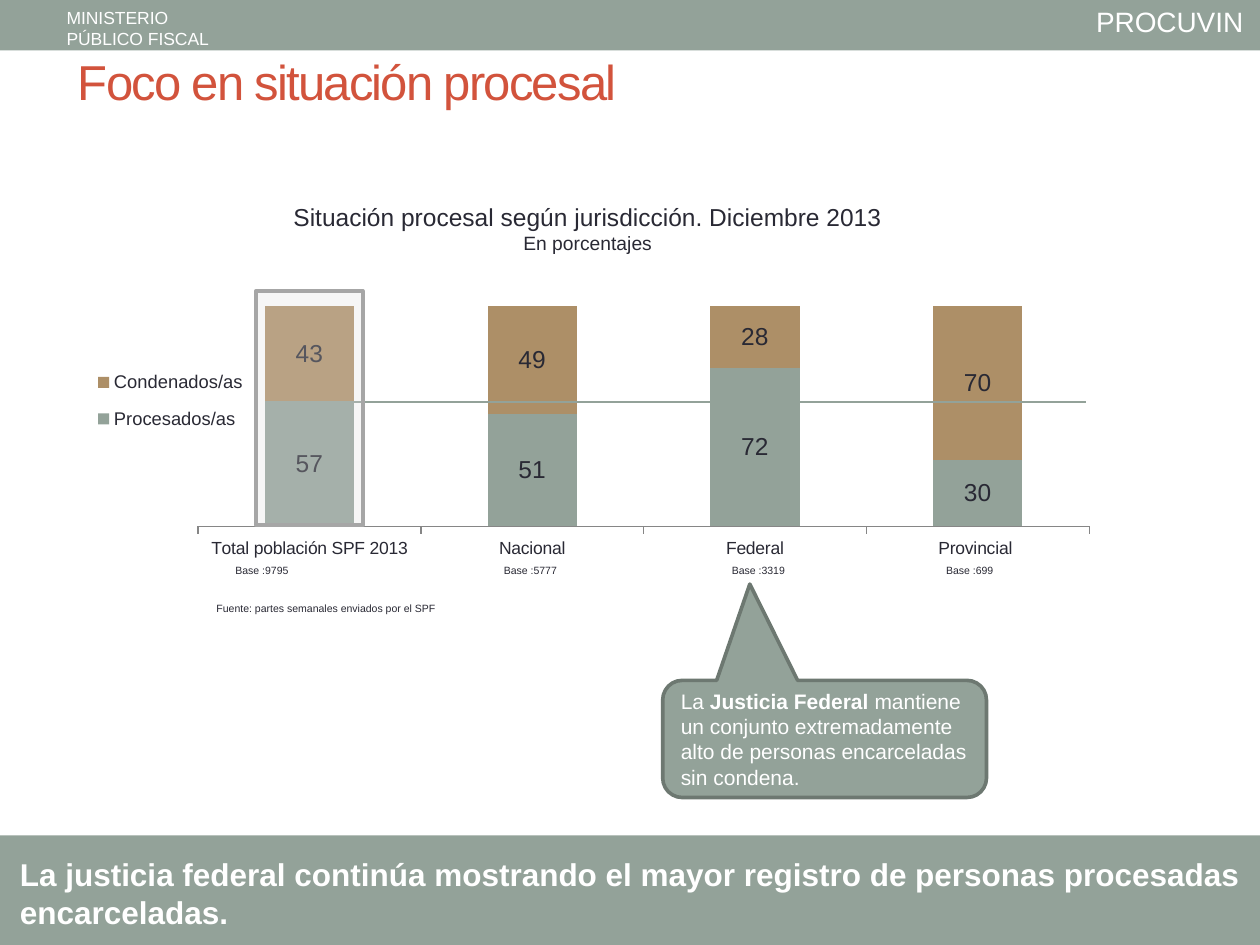
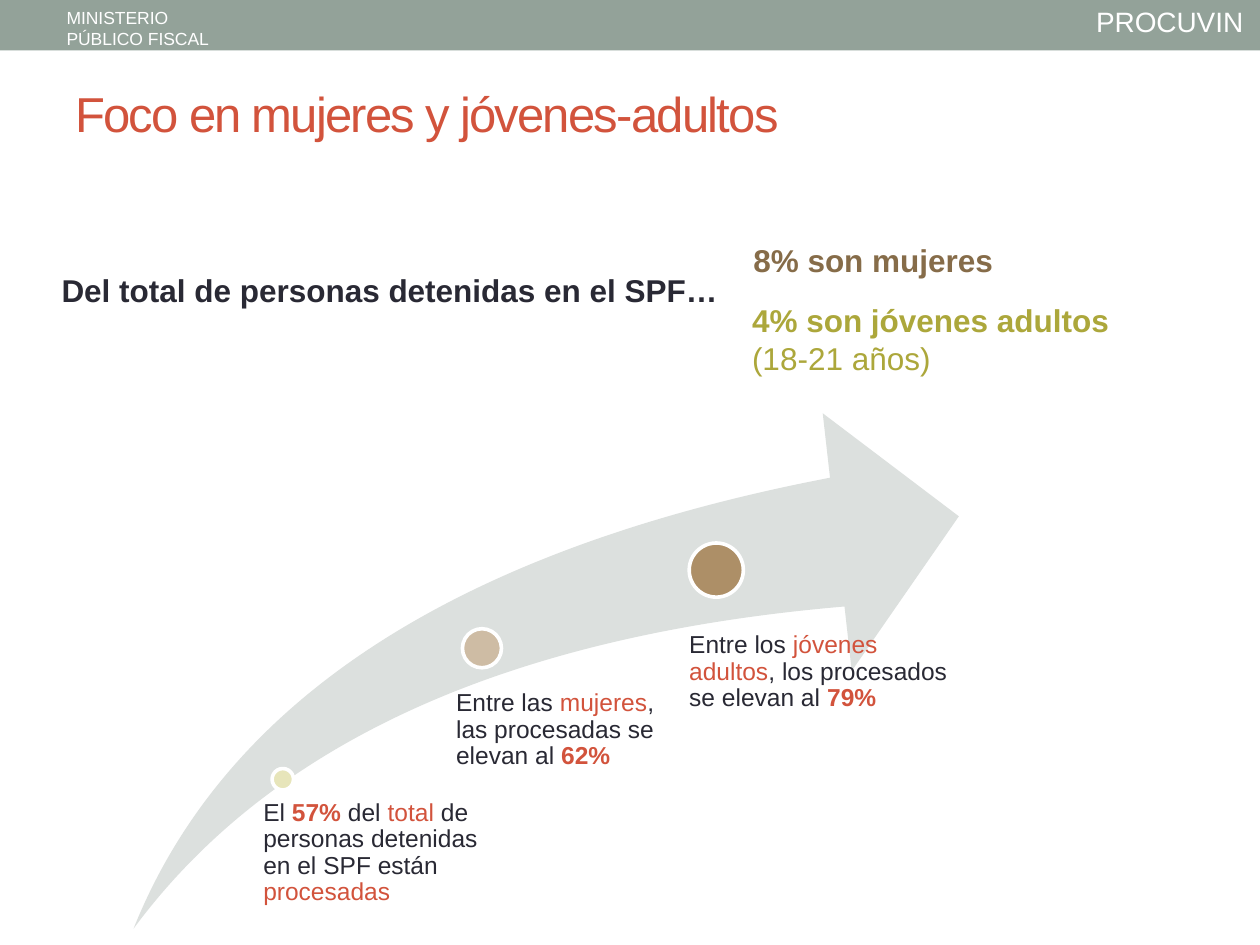
from lxml import etree
from pptx import Presentation
from pptx.chart.data import CategoryChartData
from pptx.dml.color import RGBColor
from pptx.enum.chart import XL_CHART_TYPE, XL_LEGEND_POSITION, XL_TICK_LABEL_POSITION, XL_TICK_MARK
from pptx.enum.shapes import MSO_CONNECTOR, MSO_SHAPE
from pptx.enum.text import MSO_ANCHOR, MSO_AUTO_SIZE, PP_ALIGN
from pptx.oxml import parse_xml
from pptx.oxml.ns import nsdecls, qn
from pptx.util import Inches, Pt

STACKED = XL_CHART_TYPE.COLUMN_STACKED_100
RIGHT = XL_LEGEND_POSITION.RIGHT
LOW = XL_TICK_LABEL_POSITION.LOW
TICK_OUT, TICK_NONE = XL_TICK_MARK.OUTSIDE, XL_TICK_MARK.NONE
STRAIGHT = MSO_CONNECTOR.STRAIGHT
RECT, OVAL = MSO_SHAPE.RECTANGLE, MSO_SHAPE.OVAL
CALLOUT, SWOOSH = MSO_SHAPE.ROUNDED_RECTANGULAR_CALLOUT, MSO_SHAPE.SWOOSH_ARROW
TOP, MIDDLE = MSO_ANCHOR.TOP, MSO_ANCHOR.MIDDLE
LEFT, CENTER = PP_ALIGN.LEFT, PP_ALIGN.CENTER
FIT = MSO_AUTO_SIZE.SHAPE_TO_FIT_TEXT

FONT = "Arial"
WHITE = RGBColor(0xFF, 0xFF, 0xFF)
INK = RGBColor(0x29, 0x29, 0x34)
RED = RGBColor(0xD2, 0x53, 0x3C)
SAGE = RGBColor(0x93, 0xA2, 0x99)
DARK_SAGE = RGBColor(0x6D, 0x78, 0x71)
TAN = RGBColor(0xAD, 0x8F, 0x67)
LIGHT_TAN = RGBColor(0xCE, 0xBC, 0xA4)
BROWN = RGBColor(0x86, 0x6C, 0x49)
OLIVE = RGBColor(0xAC, 0xA7, 0x3B)
CREAM = RGBColor(0xE7, 0xE5, 0xBA)
PALE = RGBColor(0xDC, 0xE0, 0xDE)
VEIL = RGBColor(0xDD, 0xDD, 0xDD)
GREY = RGBColor(0xA6, 0xA6, 0xA6)
AXIS = RGBColor(0x86, 0x86, 0x86)
OUTLINE = 2.08

# A paragraph is a list of runs; a run is (text, format values).
BOLD = {"bold": True}
HOT = {"color": RED}
HOT_BOLD = {"color": RED, "bold": True}

HEADER = [
    ((8.6, -0.01, 1.38, 0.37), 16, [[("PROCUVIN", {})]]),
    ((0.43, 0.01, 1.34, 0.44), 10, [[("MINISTERIO", {})], [("PÚBLICO FISCAL", {})]]),
]

CATEGORIES = ["Total población SPF 2013", "Nacional", "Federal", "Provincial "]
SERIES = [
    ("Procesados/as", [57, 51, 72, 30], SAGE),
    ("Condenados/as", [43, 49, 28, 70], TAN),
]
BASES = [(1.77, 9795), (3.9, 5777), (5.71, 3319), (7.41, 699)]
CHART_TITLE = [
    [("Situación procesal según jurisdicción. Diciembre 2013", {})],
    [("En porcentajes", {"size": Pt(11)})],
]
CALLOUT_TEXT = [[
    ("La ", {}), ("Justicia Federal ", BOLD),
    ("mantiene un conjunto extremadamente alto de personas encarceladas sin condena.", {}),
]]
SOURCE = "Fuente: partes semanales enviados por el SPF"
CONCLUSION = ("La justicia federal continúa mostrando el mayor registro "
              "de personas procesadas encarceladas.")

SHARES = [
    ((5.88, 1.86, 4.02, 0.61), BROWN, [[("8% son mujeres", BOLD)]]),
    ((5.87, 2.34, 3.31, 0.71), OLIVE,
     [[("4% son jóvenes adultos ", BOLD), ("(18-21 años)", {})]]),
    ((0.39, 2.1, 7.17, 0.4), INK, [[("Del total de personas detenidas en el SPF…", BOLD)]]),
]
# dot (left, top, diameter, colour), text box, left inset, runs
MILESTONES = [
    ((2.16, 6.1, 0.17, CREAM), (2, 6.35, 1.86, 1.02), 0.09,
     [("El ", {}), ("57% ", HOT_BOLD), ("del ", {}), ("total", HOT),
      (" de personas detenidas en el SPF están ", {}), ("procesadas", HOT)]),
    ((3.67, 4.99, 0.31, LIGHT_TAN), (3.46, 5.48, 1.89, 0.65), 0.16,
     [("Entre las ", {}), ("mujeres", HOT),
      (", las procesadas se elevan al ", {}), ("62%", HOT_BOLD)]),
    ((5.47, 4.31, 0.43, TAN), (5.24, 5.02, 2.4, 2.04), 0.23,
     [("Entre los ", {}), ("jóvenes adultos", HOT),
      (", los procesados se elevan al ", {}), ("79%", HOT_BOLD)]),
]


def set_font(font, **values):
    values = {"name": FONT, **values}
    font.color.rgb = values.pop("color", INK)
    for name, value in values.items():
        setattr(font, name, value)


def fill_text(tf, paragraphs, size, color=INK, align=LEFT, spacing=None):
    for i, runs in enumerate(paragraphs):
        p = tf.paragraphs[0] if i == 0 else tf.add_paragraph()
        p.alignment = align
        p.line_spacing = spacing
        for text, values in runs:
            r = p.add_run()
            r.text = text
            set_font(r.font, **{"size": Pt(size), "color": color, **values})


def add_text(slide, box, paragraphs, size, color=INK, wrap=True, fit=True,
             anchor=TOP, insets=None, **layout):
    tf = slide.shapes.add_textbox(*map(Inches, box)).text_frame
    tf.word_wrap = wrap
    tf.vertical_anchor = anchor
    if fit:
        tf.auto_size = FIT
    if insets:
        for side, value in zip(("left", "top", "right", "bottom"), insets):
            setattr(tf, f"margin_{side}", Inches(value))
    fill_text(tf, paragraphs, size, color, **layout)
    return tf


def add_shape(slide, kind, box, fill, line=None, adjustments=()):
    sp = slide.shapes.add_shape(kind, *map(Inches, box))
    sp.shadow.inherit = False
    sp.fill.solid()
    sp.fill.fore_color.rgb = fill
    if line is None:
        sp.line.fill.background()
    else:
        sp.line.color.rgb = line
        sp.line.width = Pt(OUTLINE)
    for i, value in enumerate(adjustments):
        sp.adjustments[i] = value
    return sp


def set_alpha(sp, percent):
    color = sp.fill._xPr.find(qn("a:solidFill"))[0]
    etree.SubElement(color, qn("a:alpha"), val=str(percent * 1000))


def start_slide(prs, title, title_box):
    """Add a blank slide with the shared header band and title."""
    slide = prs.slides.add_slide(prs.slide_layouts[6])
    add_shape(slide, RECT, (0, 0, 10, 0.4), SAGE)
    for box, size, paragraphs in HEADER:
        add_text(slide, box, paragraphs, size, WHITE, wrap=False)
    tf = add_text(slide, title_box, [[(title, {})]], 28, RED, fit=False, anchor=MIDDLE)
    tf.paragraphs[0].runs[0].font._element.set("spc", "-100")
    return slide


def manual_layout(x, y, w, h, inner=False):
    target = '<c:layoutTarget val="inner"/>' if inner else ""
    modes = '<c:xMode val="edge"/><c:yMode val="edge"/>'
    sizes = "".join(f'<c:{k} val="{v}"/>' for k, v in zip("xywh", (x, y, w, h)))
    return parse_xml(f'<c:layout {nsdecls("c")}><c:manualLayout>{target}{modes}{sizes}'
                     '</c:manualLayout></c:layout>')


def add_status_chart(slide):
    data = CategoryChartData()
    data.categories = CATEGORIES
    for name, values, _ in SERIES:
        data.add_series(name, values)
    box = map(Inches, (0.51, 2.36, 8.43, 2.13))
    chart = slide.shapes.add_chart(STACKED, *box, data).chart
    set_font(chart.font, size=Pt(18))
    chart.has_title = False

    plot = chart.plots[0]
    plot.gap_width, plot.overlap = 150, 100
    plot.vary_by_categories = False
    for series, (_, _, color) in zip(plot.series, SERIES):
        series.format.fill.solid()
        series.format.fill.fore_color.rgb = color
        series.data_labels.show_value = True
        set_font(series.data_labels.font, size=Pt(14))

    chart.value_axis.visible = False
    chart.value_axis.has_major_gridlines = False
    axis = chart.category_axis
    axis.major_tick_mark, axis.minor_tick_mark = TICK_OUT, TICK_NONE
    axis.tick_label_position = LOW
    axis.format.line.color.rgb = AXIS
    set_font(axis.tick_labels.font, size=Pt(10))

    chart.has_legend = True
    legend = chart.legend
    legend.position = RIGHT
    legend.include_in_layout = False
    set_font(legend.font, size=Pt(10.5))
    area = chart._chartSpace.chart.plotArea
    for parent in (area, legend._element):
        for old in parent.findall(qn("c:layout")):
            parent.remove(old)
    area.insert(0, manual_layout(0.126, 0.034, 0.839, 0.82, inner=True))
    position = legend._element.find(qn("c:legendPos"))
    position.addnext(manual_layout(0.02, 0.22, 0.16, 0.33))


def build_status_slide(prs):
    slide = start_slide(prs, "Foco en situación procesal", (0.52, 0.02, 9, 1.25))
    sp = add_shape(slide, CALLOUT, (5.26, 5.4, 2.57, 0.93), SAGE, DARK_SAGE,
                   (-0.231, -1.322, 0.167))
    sp.text_frame.word_wrap = True
    sp.text_frame.vertical_anchor = MIDDLE
    fill_text(sp.text_frame, CALLOUT_TEXT, 12, WHITE)
    add_status_chart(slide)
    add_shape(slide, RECT, (0, 6.63, 10, 0.87), SAGE)
    add_text(slide, (1.62, 4.73, 1.96, 0.2), [[(SOURCE, {})]], 6, wrap=False)
    add_text(slide, (1.95, 1.55, 5.43, 0.52), CHART_TITLE, 14, align=CENTER)

    ends = map(Inches, (2.12, 3.19, 8.62, 3.19))
    line = slide.shapes.add_connector(STRAIGHT, *ends)
    line.line.color.rgb = SAGE
    line.line.width = Pt(0.75)
    etree.SubElement(line._element.spPr, qn("a:effectLst"))

    highlight = add_shape(slide, RECT, (2.03, 2.31, 0.85, 1.86), VEIL, GREY)
    set_alpha(highlight, 25)
    for left, base in BASES:
        width = 0.63 if base > 999 else 0.58
        add_text(slide, (left, 4.43, width, 0.2), [[(f"Base :{base}", {})]], 6, wrap=False)
    add_text(slide, (0.06, 6.74, 10, 0.71), [[(CONCLUSION, BOLD)]], 18, WHITE)


def build_groups_slide(prs):
    slide = start_slide(prs, "Foco en mujeres y jóvenes-adultos", (0.5, 0.36, 9, 1.08))
    for box, color, paragraphs in SHARES:
        add_text(slide, box, paragraphs, 18, color)
    add_shape(slide, SWOOSH, (1.06, 3.28, 6.55, 4.09), PALE, adjustments=(0.25, 0.25))
    for (left, top, size, color), box, inset, runs in MILESTONES:
        add_shape(slide, OVAL, (left, top, size, size), color, WHITE)
        add_text(slide, box, [runs], 14, fit=False, insets=(inset, 0, 0, 0), spacing=0.9)


def main():
    prs = Presentation()
    prs.slide_width, prs.slide_height = Inches(10), Inches(7.5)
    build_status_slide(prs)
    build_groups_slide(prs)
    prs.save("out.pptx")


if __name__ == "__main__":
    main()
